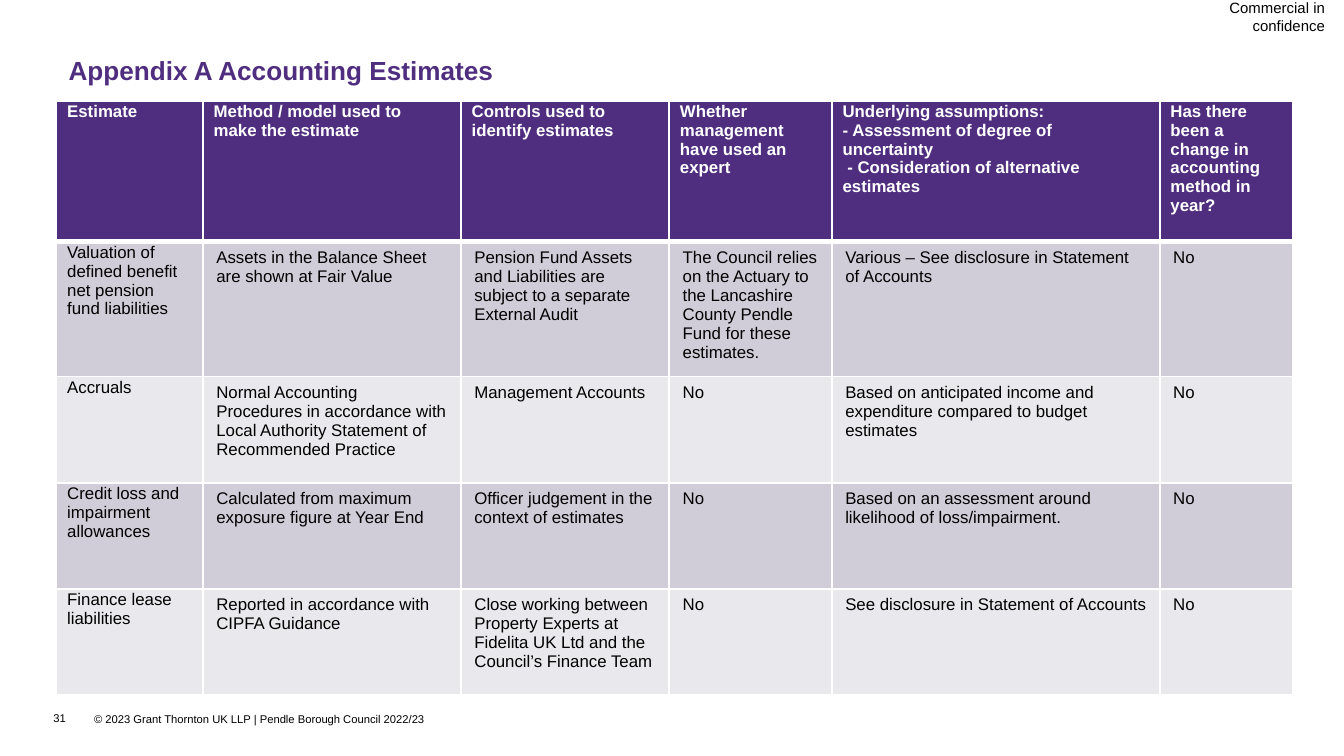
from dataclasses import dataclass

from lxml import etree
from pptx import Presentation
from pptx.dml.color import RGBColor
from pptx.enum.text import MSO_ANCHOR, PP_ALIGN
from pptx.oxml.ns import qn
from pptx.util import Inches, Pt


@dataclass(frozen=True)
class Theme:
    font: str = "Arial"
    purple: str = "4F2D7F"
    black: str = "000000"
    white: str = "FFFFFF"
    bands: tuple = ("D0CDD8", "E9E8EC")
    title_size: int = 14
    table_size: int = 9
    label_size: int = 8
    footer_size: int = 6
    thin_line: int = 1
    header_line: int = 3


class SlideBuilder:
    def __init__(self, slide, theme):
        self.slide = slide
        self.theme = theme

    def style(self, paragraph, size, color, bold=False):
        font = paragraph.font
        font.name = self.theme.font
        font.size = Pt(size)
        font.bold = bold
        font.color.rgb = RGBColor.from_string(color)

    def text(self, text, box, size, color=None, bold=False, align=PP_ALIGN.LEFT,
             anchor=MSO_ANCHOR.TOP, margins=(0, 0), line_spacing=None):
        shape = self.slide.shapes.add_textbox(*map(Inches, box))
        frame = shape.text_frame
        frame.word_wrap = True
        frame.vertical_anchor = anchor
        frame.margin_left = frame.margin_right = Inches(margins[0])
        frame.margin_top = frame.margin_bottom = Inches(margins[1])
        paragraph = frame.paragraphs[0]
        paragraph.text = text
        paragraph.alignment = align
        paragraph.line_spacing = line_spacing
        self.style(paragraph, size, color or self.theme.black, bold)

    def border(self, cell, header):
        """Draw white rules, with a heavier one under the header row."""
        thin = self.theme.thin_line
        widths = {
            "a:lnL": thin,
            "a:lnR": thin,
            "a:lnT": thin,
            "a:lnB": self.theme.header_line if header else thin,
        }
        properties = cell._tc.get_or_add_tcPr()
        for position, (tag, width) in enumerate(widths.items()):
            line = etree.Element(qn(tag), w=str(Pt(width)))
            fill = etree.SubElement(line, qn("a:solidFill"))
            etree.SubElement(fill, qn("a:srgbClr"), val=self.theme.white)
            properties.insert(position, line)

    def cell(self, cell, text, row_index, column_index):
        theme = self.theme
        header = row_index == 0
        fill = theme.purple if header else theme.bands[(row_index - 1) % 2]
        cell.fill.solid()
        cell.fill.fore_color.rgb = RGBColor.from_string(fill)
        if header or column_index == 0:
            cell.margin_left = Inches(0.08)
            cell.margin_right = Inches(0.1)
            cell.margin_top = cell.margin_bottom = Inches(0.01)
        cell.text = text
        for paragraph in cell.text_frame.paragraphs:
            self.style(paragraph, theme.table_size,
                       theme.white if header else theme.black, header)
        self.border(cell, header)

    def table(self, rows, left, top, column_widths, row_heights):
        table = self.slide.shapes.add_table(
            len(rows), len(column_widths), Inches(left), Inches(top),
            Inches(sum(column_widths)), Inches(sum(row_heights))).table
        for column, width in zip(table.columns, column_widths):
            column.width = Inches(width)
        for row, height in zip(table.rows, row_heights):
            row.height = Inches(height)
        for row_index, texts in enumerate(rows):
            for column_index, text in enumerate(texts):
                self.cell(table.cell(row_index, column_index), text,
                          row_index, column_index)


ESTIMATES = [
    ("Estimate",
     "Method / model used to make the estimate",
     "Controls used to identify estimates",
     "Whether management have used an expert",
     "Underlying assumptions:\n- Assessment of degree of uncertainty\n"
     " - Consideration of alternative estimates",
     "Has there been a\nchange in accounting\nmethod in year?"),
    ("Valuation of defined benefit net pension fund liabilities",
     "Assets in the Balance Sheet are shown at Fair Value",
     "Pension Fund Assets and Liabilities are subject to a separate External Audit",
     "The Council relies on the Actuary to the Lancashire County Pendle Fund "
     "for these estimates.",
     "Various – See disclosure in Statement of Accounts",
     "No"),
    ("Accruals",
     "Normal Accounting Procedures in accordance with Local Authority "
     "Statement of Recommended Practice",
     "Management Accounts",
     "No",
     "Based on anticipated income and expenditure compared to budget estimates",
     "No"),
    ("Credit loss and impairment allowances",
     "Calculated from maximum exposure figure at Year End",
     "Officer judgement in the context of estimates",
     "No",
     "Based on an assessment around likelihood of loss/impairment.",
     "No"),
    ("Finance lease liabilities",
     "Reported in accordance with CIPFA Guidance",
     "Close working between Property Experts at Fidelita UK Ltd and the "
     "Council’s Finance Team",
     "No",
     "See disclosure in Statement of Accounts",
     "No"),
]


def main():
    presentation = Presentation()
    presentation.slide_width = Inches(10)
    presentation.slide_height = presentation.slide_width * 9 // 16
    theme = Theme()
    slide = presentation.slides.add_slide(presentation.slide_layouts[6])
    builder = SlideBuilder(slide, theme)

    # Footer and confidentiality label
    builder.text("© 2023 Grant Thornton UK LLP | Pendle Borough Council 2022/23",
                 (0.7, 5.3, 4.31, 0.1), theme.footer_size)
    builder.text("Commercial in confidence", (8.44, 0, 1.56, 0.24),
                 theme.label_size, align=PP_ALIGN.RIGHT, anchor=MSO_ANCHOR.MIDDLE,
                 margins=(0.14, 0))

    # Title
    builder.text("Appendix A Accounting Estimates", (0.51, 0.43, 8.98, 0.36),
                 theme.title_size, theme.purple, bold=True, line_spacing=0.9)

    # Estimates table
    builder.table(ESTIMATES, 0.42, 0.75, (1.09, 1.92, 1.55, 1.21, 2.44, 0.99),
                  (1.05, 0.79, 0.79, 0.79, 0.79))

    # Page number
    builder.text("31", (0.3, 5.24, 0.4, 0.23), theme.footer_size,
                 margins=(0.1, 0.05))

    presentation.save("out.pptx")


if __name__ == "__main__":
    main()
